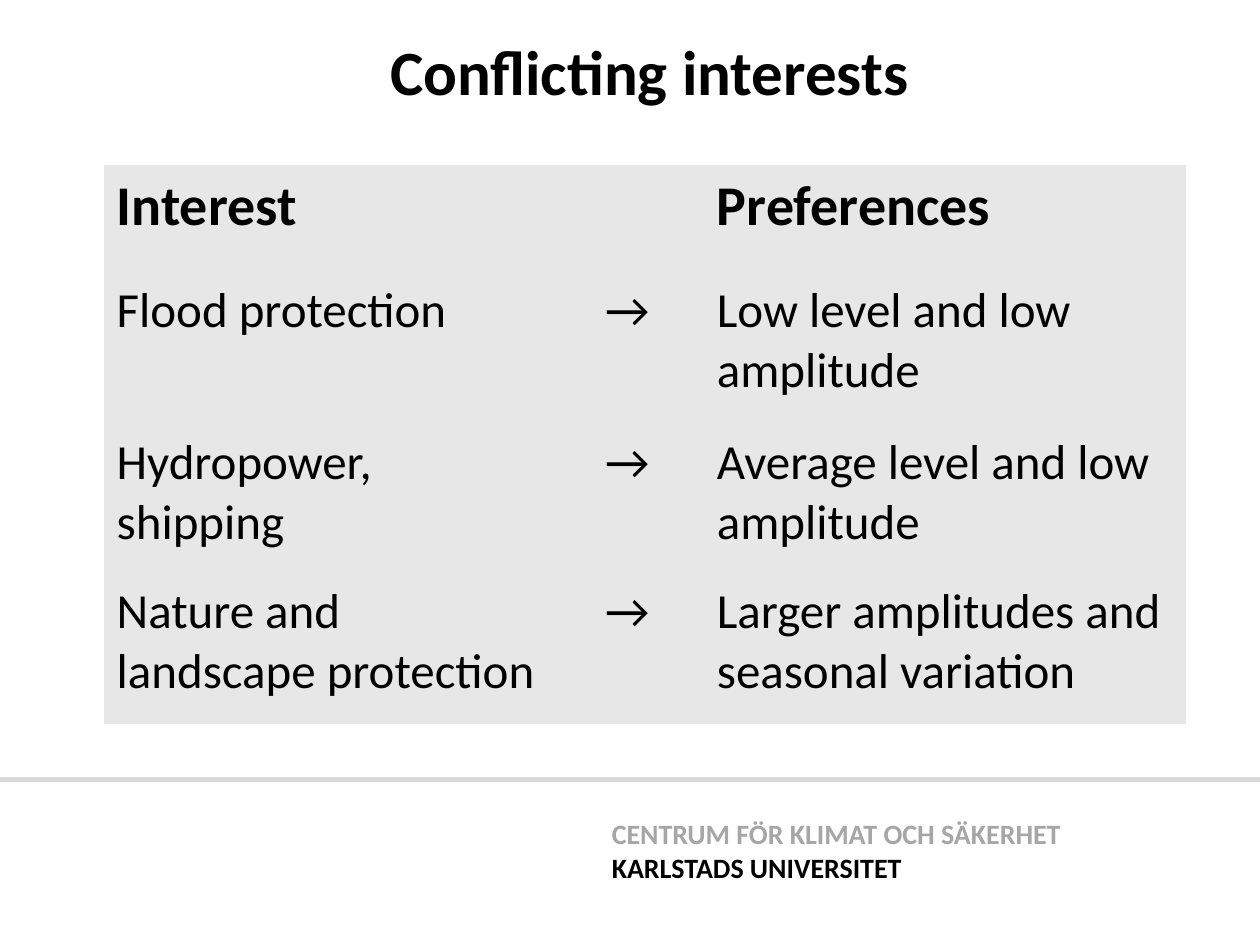
from dataclasses import dataclass

from lxml.etree import SubElement
from pptx import Presentation
from pptx.dml.color import RGBColor
from pptx.enum.shapes import MSO_CONNECTOR
from pptx.enum.text import PP_ALIGN
from pptx.oxml.ns import qn
from pptx.util import Pt

NO_STYLE_NO_GRID = "{2D5ABB26-0587-4C30-8999-92F81FD0307C}"


@dataclass(frozen=True)
class Theme:
    font: str = "Calibri"
    ink: str = "000000"
    muted: str = "A6A6A6"
    rule: str = "D9D9D9"
    panel: str = "E7E7E7"
    title_size: int = 36
    header_size: int = 32
    body_size: int = 28
    footer_size: int = 16


class SlideBuilder:
    def __init__(self, slide, theme):
        self.slide = slide
        self.theme = theme

    def add_run(self, paragraph, text, size, color, bold):
        run = paragraph.add_run()
        run.text = text
        run.font.name = self.theme.font
        run.font.size = Pt(size)
        run.font.bold = bold
        run.font.color.rgb = RGBColor.from_string(color)

    def rule(self, top, width):
        connector = self.slide.shapes.add_connector(
            MSO_CONNECTOR.STRAIGHT, Pt(0), Pt(top), Pt(width), Pt(top))
        connector.line.color.rgb = RGBColor.from_string(self.theme.rule)
        connector.line.width = Pt(3)
        SubElement(connector._element.spPr, qn("a:effectLst"))

    def text(self, box, lines, size, alignment=PP_ALIGN.LEFT):
        """Add bold lines, each a (text, color) pair, in a wrapping box."""
        shape = self.slide.shapes.add_textbox(*map(Pt, box))
        frame = shape.text_frame
        frame.word_wrap = True
        for index, (text, color) in enumerate(lines):
            paragraph = frame.add_paragraph() if index else frame.paragraphs[0]
            paragraph.alignment = alignment
            self.add_run(paragraph, text, size, color, True)

    def table(self, left, top, widths, heights, rows):
        """Add a borderless table with a bold first row and a centred middle column."""
        theme = self.theme
        frame = self.slide.shapes.add_table(
            len(heights), len(widths), Pt(left), Pt(top),
            Pt(sum(widths)), Pt(sum(heights)))
        table = frame.table
        table.horz_banding = False
        table._tbl.tblPr.find(qn("a:tableStyleId")).text = NO_STYLE_NO_GRID
        for column, width in zip(table.columns, widths):
            column.width = Pt(width)
        for row_index, (height, texts) in enumerate(zip(heights, rows)):
            table.rows[row_index].height = Pt(height)
            is_header = row_index == 0
            size = theme.header_size if is_header else theme.body_size
            for column_index, text in enumerate(texts):
                cell = table.cell(row_index, column_index)
                cell.fill.solid()
                cell.fill.fore_color.rgb = RGBColor.from_string(theme.panel)
                paragraph = cell.text_frame.paragraphs[0]
                if column_index == 1:
                    paragraph.alignment = PP_ALIGN.CENTER
                if text:
                    self.add_run(paragraph, text, size, theme.ink, is_header)


def main():
    presentation = Presentation()
    presentation.slide_width = Pt(720)
    presentation.slide_height = Pt(540)
    slide = presentation.slides.add_slide(presentation.slide_layouts[6])
    theme = Theme()
    builder = SlideBuilder(slide, theme)

    builder.rule(445.5, 720)
    builder.text(
        (342.5, 463, 284, 46),
        [("CENTRUM FÖR KLIMAT OCH SÄKERHET", theme.muted),
         ("KARLSTADS UNIVERSITET", theme.ink)],
        theme.footer_size)
    builder.text((31, 15, 680, 57), [("Conflicting interests", theme.ink)],
                 theme.title_size, PP_ALIGN.CENTER)

    preferences = {
        "Flood protection": "Low level and low amplitude",
        "Hydropower, shipping": "Average level and low amplitude",
        "Nature and landscape protection":
            "Larger amplitudes and seasonal variation",
    }
    rows = [("Interest", "", "Preferences")]
    rows += [(interest, "→", wish) for interest, wish in preferences.items()]
    builder.table(59.5, 94.5, (255, 88, 275), (62.5, 87, 85, 85), rows)

    presentation.save("out.pptx")


if __name__ == "__main__":
    main()
